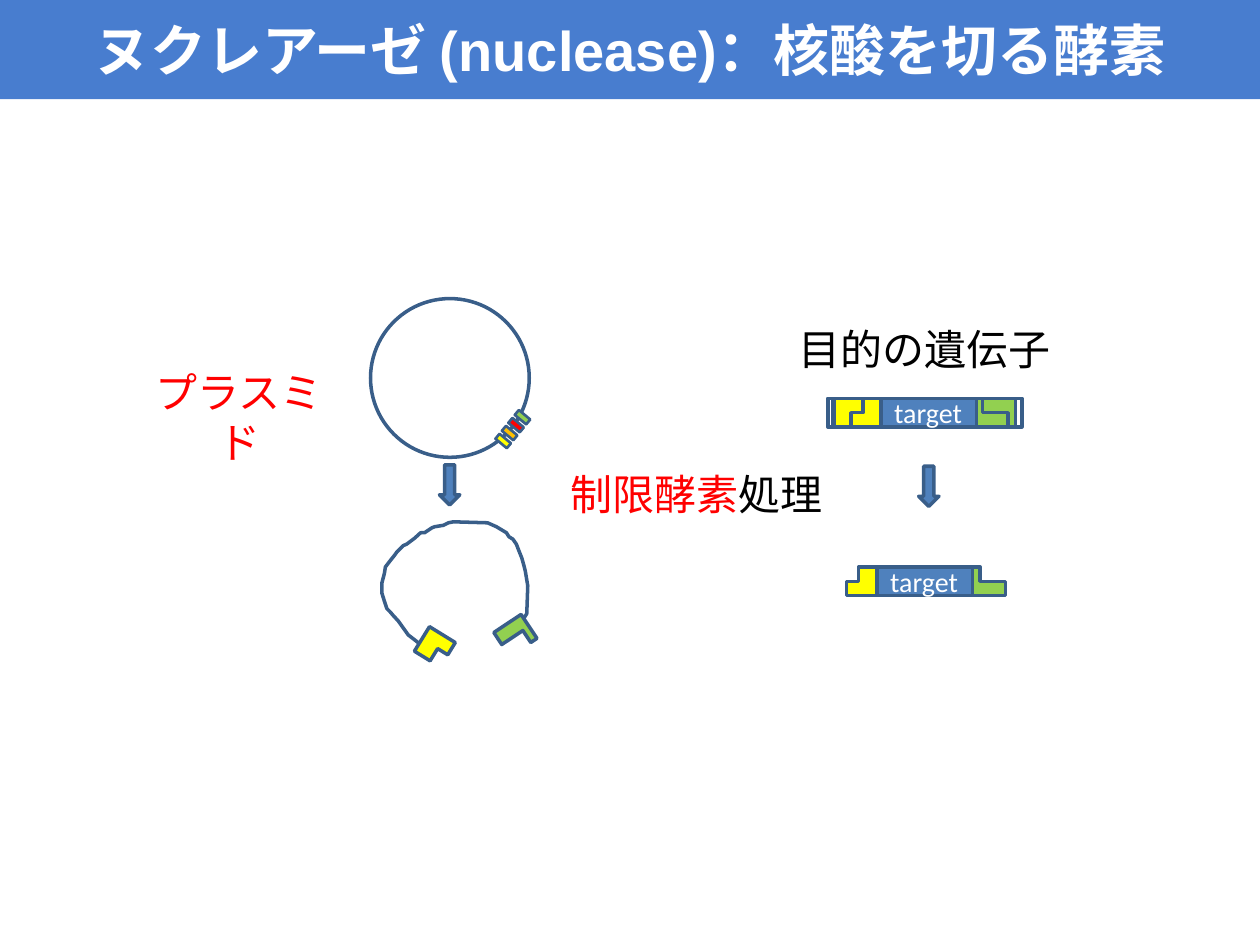
from dataclasses import dataclass
from typing import Optional

import pptx
import pptx.dml.color
import pptx.enum.shapes
import pptx.enum.text
import pptx.util

Cm = pptx.util.Cm
Pt = pptx.util.Pt
RGBColor = pptx.dml.color.RGBColor
Preset = pptx.enum.shapes.MSO_SHAPE
Anchor = pptx.enum.text.MSO_ANCHOR
AutoSize = pptx.enum.text.MSO_AUTO_SIZE

BAND_BLUE = RGBColor(0x48, 0x7D, 0xCF)
GENE_BLUE = RGBColor(0x4F, 0x81, 0xBD)
OUTLINE = RGBColor(0x39, 0x5E, 0x89)
YELLOW = RGBColor(0xFF, 0xFF, 0x00)
ORANGE = RGBColor(0xFF, 0xC0, 0x00)
GREEN = RGBColor(0x92, 0xD0, 0x50)
RED = RGBColor(0xFF, 0x00, 0x00)
BLACK = RGBColor(0, 0, 0)
WHITE = RGBColor(0xFF, 0xFF, 0xFF)

DNA_HEIGHT = 0.58
TARGET_WIDTH = 1.96
YELLOW_WIDTH = 0.61
GREEN_WIDTH = 0.66
YELLOW_NOTCH = (0.5, 0.64)
GREEN_NOTCH = (0.5, 0.26)

OPENED_PLASMID = [
    (846, 1298), (836, 1290), (823, 1280), (803, 1252), (792, 1240),
    (787, 1234), (780, 1227), (775, 1212), (770, 1196), (770, 1175),
    (775, 1156), (777, 1143), (787, 1130), (795, 1120), (800, 1113),
    (813, 1100), (820, 1097), (836, 1085), (848, 1074), (856, 1074),
    (871, 1064), (876, 1062), (894, 1059), (904, 1054), (914, 1052),
    (983, 1054), (1001, 1062), (1021, 1074), (1026, 1082), (1034, 1087),
    (1041, 1097), (1046, 1110), (1052, 1125), (1057, 1143), (1059, 1151),
    (1064, 1181), (1062, 1237), (1054, 1250), (1049, 1255), (1044, 1265),
]


@dataclass
class Part:
    preset: int
    left: float
    top: float
    width: float
    height: float
    fill: Optional[RGBColor] = None
    line: Optional[RGBColor] = OUTLINE
    weight: float = 2
    rotation: float = 0
    flipped: bool = False
    notch: tuple = ()


@dataclass
class Wording:
    text: str
    color: RGBColor


@dataclass
class Label:
    left: float
    top: float
    width: float
    height: float
    wordings: list


def style(shape, fill, line, weight) -> None:
    shape.shadow.inherit = False
    if fill is None:
        shape.fill.background()
    else:
        shape.fill.solid()
        shape.fill.fore_color.rgb = fill
    if line is None:
        shape.line.fill.background()
    else:
        shape.line.color.rgb = line
        shape.line.width = Pt(weight)


def draw_part(shapes, part: Part):
    shape = shapes.add_shape(part.preset, Cm(part.left), Cm(part.top),
                             Cm(part.width), Cm(part.height))
    style(shape, part.fill, part.line, part.weight)
    for index, value in enumerate(part.notch):
        shape.adjustments[index] = value
    shape.rotation = part.rotation
    if part.flipped:
        shape._element.spPr.xfrm.set("flipH", "1")
    return shape


def write(frame, wordings: list, size: float, font: str, bold: bool = False) -> None:
    frame.word_wrap = True
    paragraph = frame.paragraphs[0]
    paragraph.alignment = pptx.enum.text.PP_ALIGN.CENTER
    for wording in wordings:
        run = paragraph.add_run()
        run.text = wording.text
        run.font.size = Pt(size)
        run.font.name = font
        run.font.bold = bold
        run.font.color.rgb = wording.color


def draw_label(shapes, label: Label, size: float = 24, font: str = "Calibri",
               bold: bool = False):
    box = shapes.add_textbox(Cm(label.left), Cm(label.top),
                             Cm(label.width), Cm(label.height))
    write(box.text_frame, label.wordings, size, font, bold)
    box.text_frame.auto_size = AutoSize.SHAPE_TO_FIT_TEXT
    return box


def yellow_end(left: float, top: float, rotation: float = 0) -> Part:
    return Part(Preset.CORNER, left, top, YELLOW_WIDTH, DNA_HEIGHT, YELLOW,
                rotation=rotation, flipped=True, notch=YELLOW_NOTCH)


def green_end(left: float, top: float, rotation: float = 0) -> Part:
    return Part(Preset.CORNER, left, top, GREEN_WIDTH, DNA_HEIGHT, GREEN,
                rotation=rotation, notch=GREEN_NOTCH)


def draw_gene(shapes, left: float, top: float) -> None:
    target = draw_part(shapes, Part(Preset.RECTANGLE, left, top, TARGET_WIDTH,
                                    DNA_HEIGHT, GENE_BLUE))
    target.text_frame.vertical_anchor = Anchor.MIDDLE
    write(target.text_frame, [Wording("target", WHITE)], 16, "Calibri")
    draw_part(shapes, green_end(left + TARGET_WIDTH, top))
    draw_part(shapes, yellow_end(left - DNA_HEIGHT, top))


def main() -> None:
    deck = pptx.Presentation()
    deck.slide_width, deck.slide_height = Cm(25.4), Cm(19.05)
    shapes = deck.slides.add_slide(deck.slide_layouts[6]).shapes

    draw_part(shapes, Part(Preset.RECTANGLE, 0, 0, 25.4, 2, BAND_BLUE, None))
    title = draw_label(shapes, Label(0, 0, 25.4, 1.98, [
        Wording("ヌクレアーゼ (nuclease)：核酸を切る酵素", WHITE)]), 32, "Arial", True)
    title.text_frame.auto_size = AutoSize.NONE
    title.text_frame.vertical_anchor = Anchor.MIDDLE

    draw_part(shapes, Part(Preset.OVAL, 7.47, 6.02, 3.2, 3.2))

    uncut_gene = shapes.add_group_shape().shapes
    uncut_top = 8.03
    draw_gene(uncut_gene, 17.73, uncut_top)
    draw_part(uncut_gene, yellow_end(16.79, uncut_top, 180))
    draw_part(uncut_gene, green_end(19.81, uncut_top, 180))
    for tip_left in (16.69, 20.47):
        draw_part(uncut_gene, Part(Preset.RECTANGLE, tip_left, uncut_top,
                                   0.13, DNA_HEIGHT))

    for arrow_left, arrow_top in ((8.86, 9.37), (18.52, 9.4)):
        draw_part(shapes, Part(Preset.DOWN_ARROW, arrow_left, arrow_top,
                               0.41, 0.81, GENE_BLUE, notch=(0.5, 0.5)))

    cut_plasmid = shapes.add_group_shape().shapes
    builder = cut_plasmid.build_freeform(*OPENED_PLASMID[0], scale=Cm(0.01))
    builder.add_line_segments(OPENED_PLASMID[1:], close=False)
    style(builder.convert_to_shape(), None, OUTLINE, 2)
    draw_part(cut_plasmid, yellow_end(8.46, 12.75, 211.6))
    draw_part(cut_plasmid, green_end(10.06, 12.52, 146.4))

    draw_gene(shapes.add_group_shape().shapes, 17.65, 11.43)

    cutting_site = shapes.add_group_shape().shapes
    for step, color in enumerate((YELLOW, ORANGE, RED, GREEN)):
        draw_part(cutting_site, Part(
            Preset.RECTANGLE, 10.08 + 0.13 * step, 8.74 - 0.16 * step,
            0.13, 0.3, color, weight=1.5, rotation=309.8))

    for label in (
        Label(13.87, 6.4, 9.55, 1.27, [Wording("目的の遺伝子", BLACK)]),
        Label(2.87, 7.26, 3.91, 1.27, [Wording("プラスミド", RED)]),
        Label(9.27, 9.32, 9.55, 1.27, [Wording("制限酵素", RED),
                                       Wording("処理", BLACK)]),
    ):
        draw_label(shapes, label)

    deck.save("out.pptx")


if __name__ == "__main__":
    main()
